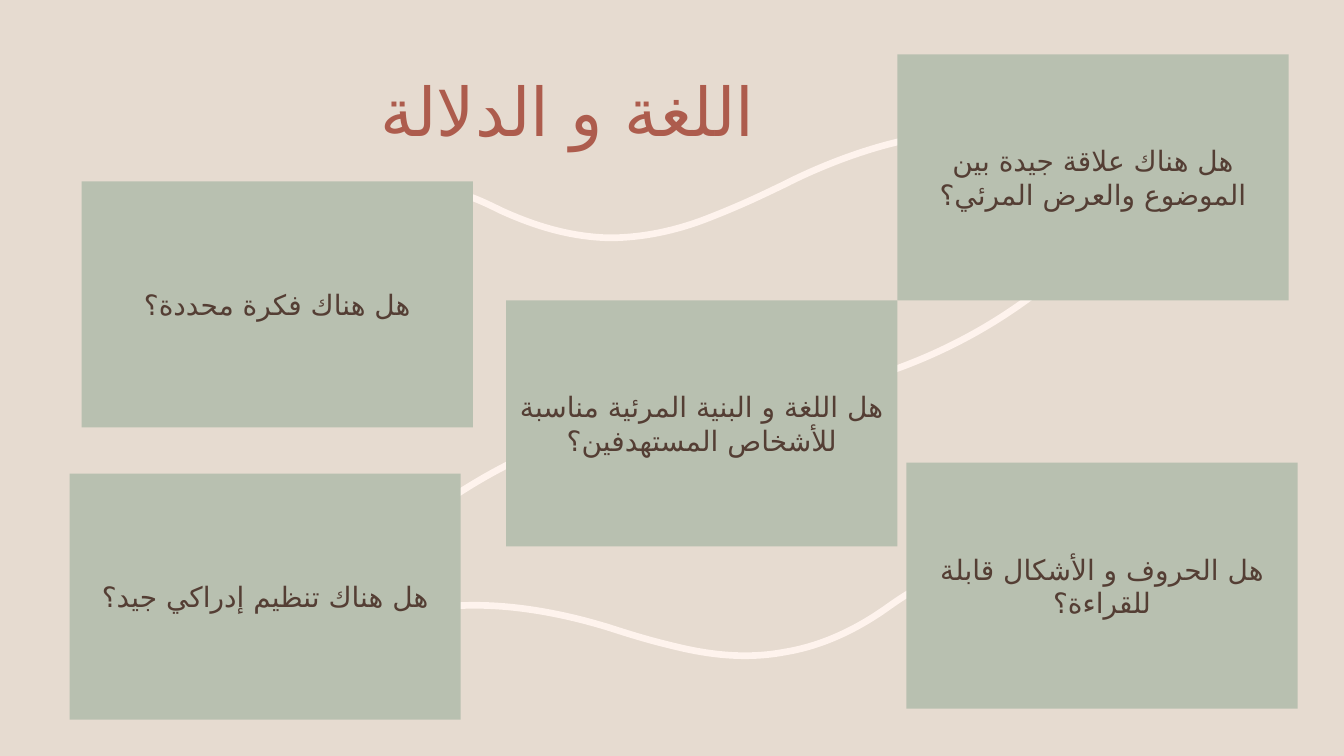
import pptx
import pptx.util
import pptx.dml.color
import pptx.enum.shapes
import pptx.enum.text
import pptx.oxml
import pptx.oxml.ns

Inches = pptx.util.Inches
SAND, SAGE, CREAM, BRICK, BROWN = "E6DBD0", "B8C0B0", "FEF3ED", "AD5C4D", "543E34"
ARABIC = "DejaVu Sans"
CARD_W, CARD_H = 3.88, 2.44

CARDS = [
    (0.81, 1.8, "هل هناك فكرة محددة؟"),
    (8.9, 0.54, "هل هناك علاقة جيدة بين الموضوع والعرض المرئي؟"),
    (5.02, 2.98, "هل اللغة و البنية المرئية مناسبة للأشخاص المستهدفين؟"),
    (0.69, 4.7, "هل هناك تنظيم إدراكي جيد؟"),
    (8.99, 4.59, "هل الحروف و الأشكال قابلة للقراءة؟"),
]

# Each wave is a start point, then three points for every Bezier piece.
WAVES = [
    [(8.33, 3.83), (9.13, 3.63), (9.85, 3.27), (10.47, 2.75)],
    [(5.84, 4.28), (5.09, 4.52), (4.45, 4.9), (3.89, 5.39)],
    [(3.07, 2.23), (3.5, 1.87), (3.98, 1.77), (4.49, 1.9),
     (4.66, 1.94), (4.81, 2.01), (4.97, 2.09),
     (5.3, 2.24), (5.65, 2.35), (6.04, 2.36),
     (6.37, 2.36), (6.7, 2.29), (7.01, 2.17),
     (7.37, 2.03), (7.57, 1.93), (7.78, 1.83),
     (8.01, 1.71), (9.4, 1.03), (10.27, 1.46)],
    [(9.2, 5.79), (9.04, 5.86), (8.91, 5.95), (8.77, 6.05),
     (8.48, 6.25), (8.15, 6.41), (7.78, 6.47),
     (7.46, 6.53), (7.14, 6.51), (6.81, 6.44),
     (6.45, 6.36), (6.24, 6.29), (6.02, 6.22),
     (5.78, 6.15), (4.34, 5.7), (3.47, 6.36)],
]


def color(code):
    return pptx.dml.color.RGBColor.from_string(code)


def apply(target, values):
    for name, value in values.items():
        setattr(target, name, value)


def paint(fill, code):
    fill.solid()
    fill.fore_color.rgb = color(code)


def write(shape, text, face, size, code, **para):
    """Put one centred right-to-left paragraph in the shape."""
    frame = shape.text_frame
    apply(frame, {
        "word_wrap": True,
        "auto_size": pptx.enum.text.MSO_AUTO_SIZE.NONE,
        "vertical_anchor": pptx.enum.text.MSO_ANCHOR.MIDDLE,
    })
    line = frame.paragraphs[0]
    apply(line, {"alignment": pptx.enum.text.PP_ALIGN.CENTER, **para})
    line._p.get_or_add_pPr().set("rtl", "1")
    run = line.add_run()
    run.text = text
    apply(run.font, {"name": face, "size": pptx.util.Pt(size)})
    run.font.color.rgb = color(code)
    props = run._r.get_or_add_rPr()
    props.set("lang", "ar-SA")
    props.append(pptx.oxml.parse_xml(
        f'<a:cs {pptx.oxml.ns.nsdecls("a")} typeface="{ARABIC}"/>'))


def bend(shape):
    """Turn every three line segments into one Bezier piece."""
    tag = pptx.oxml.ns.qn
    lines = list(shape._element.iter(tag("a:lnTo")))
    for i in range(0, len(lines), 3):
        piece = pptx.oxml.parse_xml(
            f'<a:cubicBezTo {pptx.oxml.ns.nsdecls("a")}/>')
        lines[i].addprevious(piece)
        for line in lines[i:i + 3]:
            piece.append(line.find(tag("a:pt")))
            line.getparent().remove(line)


def add_wave(slide, nodes):
    start, *rest = [(Inches(x), Inches(y)) for x, y in nodes]
    pen = slide.shapes.build_freeform(*start)
    pen.add_line_segments(rest, close=False)
    wave = pen.convert_to_shape()
    bend(wave)
    wave.shadow.inherit = False
    wave.fill.background()
    paint(wave.line.fill, CREAM)
    wave.line.width = pptx.util.Pt(4.75)


def add_card(slide, left, top, text):
    card = slide.shapes.add_shape(
        pptx.enum.shapes.MSO_SHAPE.RECTANGLE,
        Inches(left), Inches(top), Inches(CARD_W), Inches(CARD_H))
    card.shadow.inherit = False
    paint(card.fill, SAGE)
    card.line.fill.background()
    write(card, text, "Calibri", 20, BROWN)


def set_title(slide, text):
    title = slide.shapes.title
    apply(title, {"left": Inches(0.63), "top": Inches(0.77),
                  "width": Inches(10), "height": Inches(0.74)})
    write(title, text, "Lato", 48, BRICK, line_spacing=0.9)


def main():
    deck = pptx.Presentation()
    apply(deck, {"slide_width": Inches(13.33), "slide_height": Inches(7.5)})
    slide = deck.slides.add_slide(deck.slide_layouts[5])
    paint(slide.background.fill, SAND)
    set_title(slide, "اللغة و الدلالة")
    for nodes in WAVES:
        add_wave(slide, nodes)
    for card in CARDS:
        add_card(slide, *card)
    deck.save("out.pptx")


if __name__ == "__main__":
    main()
